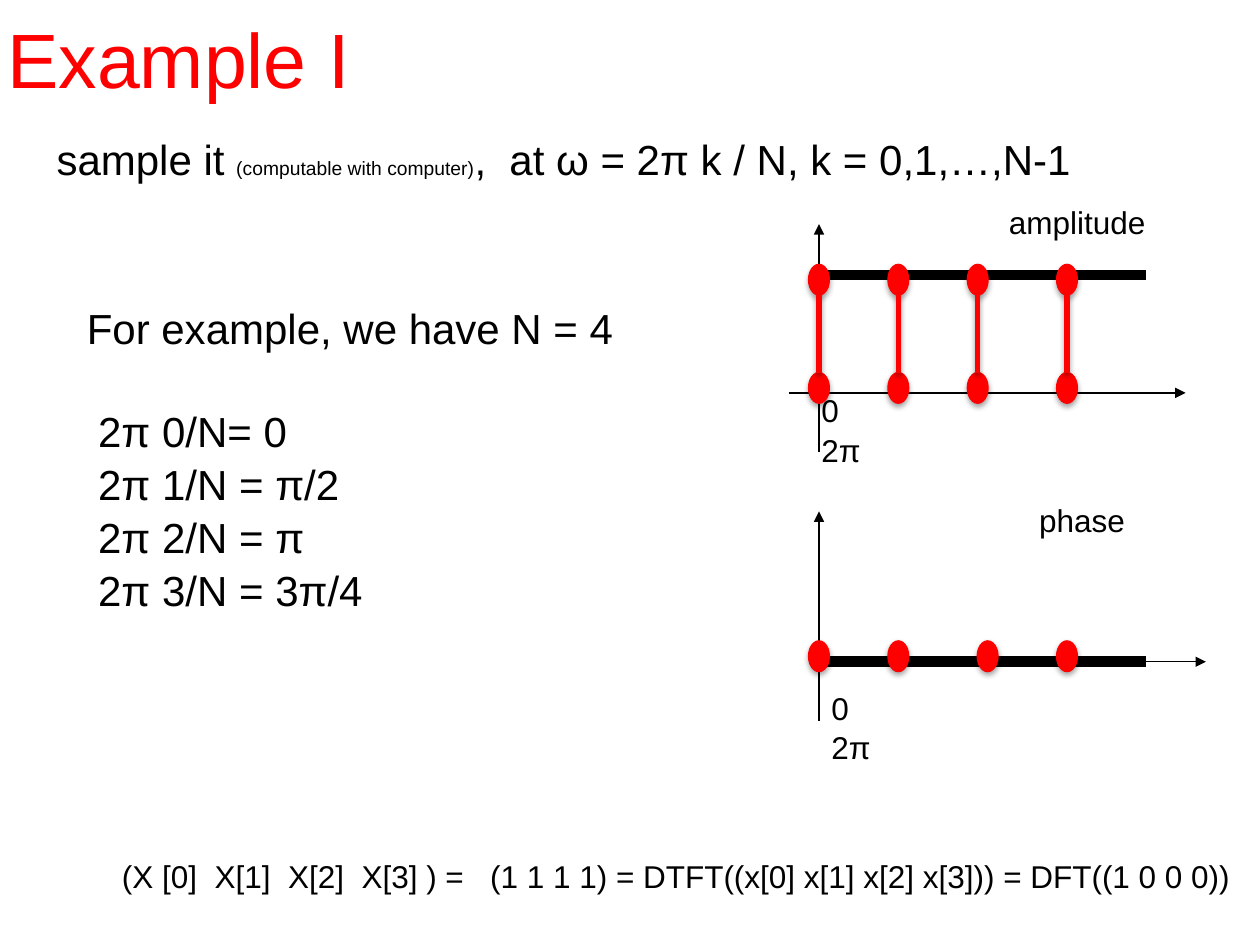
from lxml import etree
from pptx import Presentation
from pptx import util as u
from pptx.dml.color import RGBColor
from pptx.enum import shapes, text
from pptx.oxml import parse_xml
from pptx.oxml.ns import nsdecls, qn

BLACK = RGBColor(0, 0, 0)
RED = RGBColor(255, 0, 0)
FONT = "Arial"
ZERO = 16.51
STEPS = (ZERO, 18.11, 19.71, 21.51)
TURNS = (ZERO, 18.11, 19.91, 21.51)


def style(run, size, color=BLACK):
    run.font.name = FONT
    run.font.size = u.Pt(size)
    run.font.color.rgb = color


def add_text(slide, box, lines, size, color=BLACK, wrap=True):
    frame = slide.shapes.add_textbox(*map(u.Cm, box)).text_frame
    frame.word_wrap = wrap
    frame.text = "\n".join(lines)
    for para in frame.paragraphs:
        para.line_spacing = 1.05
        for run in para.runs:
            style(run, size, color)
    return frame


def add_shade(shape, alpha, dist):
    shape._element.spPr.append(parse_xml(
        f'<a:effectLst {nsdecls("a")}><a:outerShdw blurRad="{u.Pt(3.1)}" '
        f'dist="{u.Pt(dist)}" dir="5400000" rotWithShape="0">'
        f'<a:srgbClr val="000000"><a:alpha val="{alpha}000"/></a:srgbClr>'
        '</a:outerShdw></a:effectLst>'))


def add_line(slide, start, end, width, color=BLACK, arrow=False, shade=False):
    line = slide.shapes.add_connector(
        shapes.MSO_CONNECTOR.STRAIGHT, *map(u.Cm, start + end))
    line.line.width = u.Pt(width)
    line.line.color.rgb = color
    if arrow:
        etree.SubElement(line.line._get_or_add_ln(), qn("a:tailEnd"), type="triangle")
    if shade:
        add_shade(line, 38, 1.6)
    else:
        etree.SubElement(line._element.spPr, qn("a:effectLst"))


def add_dot(slide, x, y):
    wide, high = 0.42, 0.62
    dot = slide.shapes.add_shape(
        shapes.MSO_SHAPE.OVAL, u.Cm(x - wide / 2), u.Cm(y - high / 2),
        u.Cm(wide), u.Cm(high))
    dot.fill.solid()
    dot.fill.fore_color.rgb = RED
    dot.line.color.rgb = RED
    dot.line.width = u.Pt(0.75)
    add_shade(dot, 35, 1.8)


def add_axes(slide, left, right, base, low, top, level):
    add_line(slide, (left, base), (right, base), 0.75, arrow=True)
    add_line(slide, (ZERO, low), (ZERO, top), 0.75, arrow=True)
    add_line(slide, (ZERO, level), (23.11, level), 6)


def add_words(slide):
    title = add_text(slide, (-0.1, -0.48, 22.86, 3.18), ["Example I"], 44, RED)
    title.vertical_anchor = text.MSO_ANCHOR.MIDDLE

    intro = add_text(slide, (0.89, 2.51, 23.01, 1.3), ["sample it "], 24)
    for words, size in (("(computable with computer)", 11),
                        (",  at ω = 2π k / N, k = 0,1,…,N-1", 24)):
        run = intro.paragraphs[0].add_run()
        run.text = words
        style(run, size)

    body = add_text(slide, (1.5, 5.92, 23.6, 12.83), [
        "For example, we have N = 4",
        "2π 0/N= 0",
        "2π 1/N = π/2",
        "2π 2/N = π",
        "2π 3/N = 3π/4",
        "(X [0]  X[1]  X[2]  X[3] ) =   (1 1 1 1) = "
        "DTFT((x[0] x[1] x[2] x[3])) = DFT((1 0 0 0))"], 24)
    body.margin_right = 0
    rows = body.paragraphs
    for row in rows[1:]:
        row._p.get_or_add_pPr().set("marL", str(u.Cm(0.23)))
    rows[1].space_before = u.Pt(29)
    rows[-1]._p.get_or_add_pPr().set("marL", str(u.Cm(0.71)))
    rows[-1].space_before = u.Pt(137)
    style(rows[-1].runs[0], 18)


def main():
    deck = Presentation()
    deck.slide_width, deck.slide_height = u.Cm(25.4), u.Cm(19.05)
    slide = deck.slides.add_slide(deck.slide_layouts[6])
    add_words(slide)

    add_axes(slide, 15.9, 23.9, 7.92, 9.12, 4.52, 5.54)
    add_axes(slide, ZERO, 24.31, 13.34, 14.53, 10.31, 13.34)
    for box, lines in (((20.09, 3.94, 3.3, 1.02), ["amplitude"]),
                       ((20.7, 9.93, 2.26, 1.02), ["phase"]),
                       ((16.31, 7.72, 1.5, 1.8), ["0", "2π"]),
                       ((16.51, 13.72, 1.5, 1.8), ["0", "2π"])):
        add_text(slide, box, lines, 18, wrap=False)

    for x in STEPS:
        add_dot(slide, x, 7.82)
        add_dot(slide, x, 5.64)
        add_line(slide, (x, 7.52), (x, 5.92), 3, RED, shade=True)
    for x in TURNS:
        add_dot(slide, x, 13.23)
    deck.save("out.pptx")


if __name__ == "__main__":
    main()
